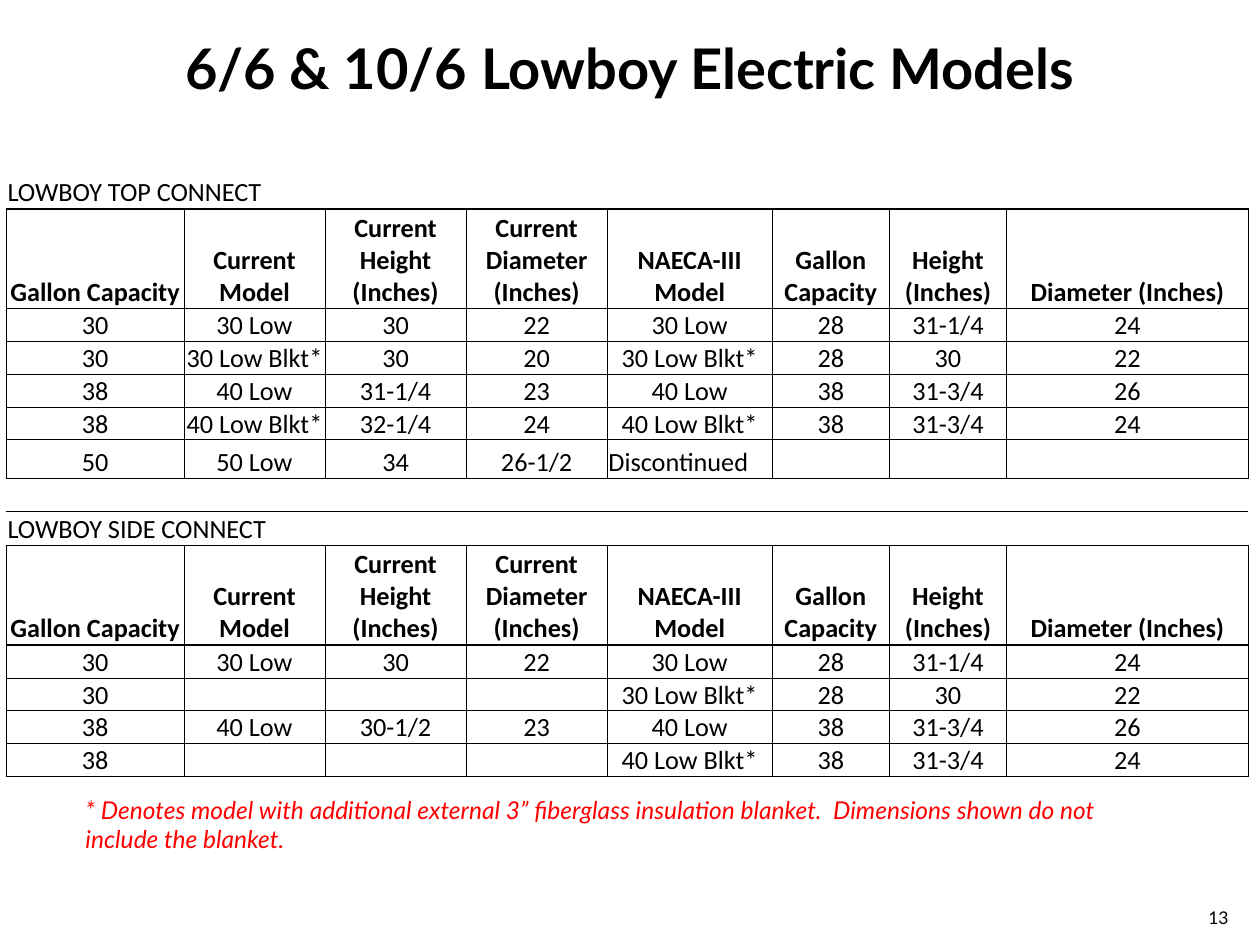
from lxml.etree import SubElement
from pptx import Presentation
from pptx.dml.color import RGBColor
from pptx.enum.text import MSO_ANCHOR as Anchor, PP_ALIGN as Align
from pptx.oxml.ns import qn
from pptx.util import Inches, Pt

BLACK, RED = "000000", "FF0000"
NO_GRID_STYLE = "{2D5ABB26-0587-4C30-8999-92F81FD0307C}"
COLUMN_WIDTHS = [1.41, 1.12, 1.12, 1.12, 1.31, 0.93, 0.93, 1.92]
HEADINGS = ["Gallon Capacity", "Current Model", "Current Height (Inches)",
            "Current Diameter (Inches)", "NAECA-III Model", "Gallon Capacity",
            "Height (Inches)", "Diameter (Inches)"]
TOP_CONNECT = [
    ["30", "30 Low", "30", "22", "30 Low", "28", "31-1/4", "24"],
    ["30", "30 Low Blkt*", "30", "20", "30 Low Blkt*", "28", "30", "22"],
    ["38", "40 Low", "31-1/4", "23", "40 Low", "38", "31-3/4", "26"],
    ["38", "40 Low Blkt*", "32-1/4", "24", "40 Low Blkt*", "38", "31-3/4", "24"],
    ["50", "50 Low", "34", "26-1/2", "Discontinued", "", "", ""],
]
SIDE_CONNECT = [
    ["30", "30 Low", "30", "22", "30 Low", "28", "31-1/4", "24"],
    ["30", "", "", "", "30 Low Blkt*", "28", "30", "22"],
    ["38", "40 Low", "30-1/2", "23", "40 Low", "38", "31-3/4", "26"],
    ["38", "", "", "", "40 Low Blkt*", "38", "31-3/4", "24"],
]


def rgb(color):
    return RGBColor.from_string(color)


def style_text(paragraph, size, font_name, color=BLACK, bold=False, italic=False,
               align=Align.LEFT):
    paragraph.alignment = align
    font = paragraph.font
    font.size, font.name = Pt(size), font_name
    font.bold, font.italic = bold, italic
    font.color.rgb = rgb(color)


def add_text(slide, text, left, top, width, height, size, anchor=Anchor.TOP, **style):
    box = slide.shapes.add_textbox(Inches(left), Inches(top), Inches(width), Inches(height))
    frame = box.text_frame
    frame.word_wrap = True
    frame.vertical_anchor = anchor
    frame.text = text
    style_text(frame.paragraphs[0], size, "Lato", **style)


def set_borders(cell, widths):
    """Draw the sides given as {"L": points}; other sides stay open."""
    properties = cell._tc.get_or_add_tcPr()
    for side in "LRTB":
        if side in widths:
            line = SubElement(properties, qn(f"a:ln{side}"), w=str(Pt(widths[side])))
            fill = SubElement(line, qn("a:solidFill"))
            SubElement(fill, qn("a:srgbClr"), val=BLACK)


def fill_cell(cell, text, borders, bold=False, align=Align.CENTER):
    set_borders(cell, borders)
    cell.fill.background()
    cell.vertical_anchor = Anchor.BOTTOM
    cell.margin_left = cell.margin_right = cell.margin_top = Inches(0.01)
    cell.margin_bottom = 0
    paragraph = cell.text_frame.paragraphs[0]
    if text:
        paragraph.text = text
    else:
        # An empty cell takes its line height from the end mark
        SubElement(paragraph._p, qn("a:endParaRPr"), sz="1500")
    style_text(paragraph, 15, "Calibri", bold=bold, align=align)


def fill_section(table, first_row, caption, models):
    """Write a caption row, a heading row and the model rows below it."""
    last_column = len(HEADINGS) - 1
    for column in range(len(HEADINGS)):
        fill_cell(table.cell(first_row, column), "" if column else caption,
                  {"B": 1}, align=Align.LEFT)
    table.cell(first_row, 0).merge(table.cell(first_row, 2))

    for offset, values in enumerate([HEADINGS] + models):
        heading = offset == 0
        for column, text in enumerate(values):
            borders = {
                "L": 1 if heading and column == 0 else 0.5,
                "R": 1 if heading and column == last_column else 0.5,
                "T": 1 if offset <= 1 else 0.5,
                "B": 1 if heading else 0.5,
            }
            align = Align.LEFT if text == "Discontinued" else Align.CENTER
            fill_cell(table.cell(first_row + 1 + offset, column), text, borders,
                      bold=heading, align=align)


def add_models_table(slide):
    row_heights = [0.27, 0.79] + [0.26] * 4 + [0.31, 0.25, 0.27, 0.79] + [0.26] * 4
    table = slide.shapes.add_table(
        len(row_heights), len(COLUMN_WIDTHS), Inches(0.05), Inches(1.39),
        Inches(sum(COLUMN_WIDTHS)), Inches(sum(row_heights))).table
    table.first_row = table.horz_banding = False
    table._tbl.tblPr.find(qn("a:tableStyleId")).text = NO_GRID_STYLE
    for column, width in zip(table.columns, COLUMN_WIDTHS):
        column.width = Inches(width)
    for row, height in zip(table.rows, row_heights):
        row.height = Inches(height)

    gap_row = len(TOP_CONNECT) + 2
    fill_section(table, 0, "LOWBOY TOP CONNECT", TOP_CONNECT)
    for cell in table.rows[gap_row].cells:
        fill_cell(cell, "", {"T": 0.5})
    fill_section(table, gap_row + 1, "LOWBOY SIDE CONNECT", SIDE_CONNECT)


def main():
    deck = Presentation()
    deck.slide_width, deck.slide_height = Inches(10), Inches(7.5)
    slide = deck.slides.add_slide(deck.slide_layouts[6])
    add_text(slide, "6/6 & 10/6 Lowboy Electric Models", 0.5, 0.22, 9, 0.62, 32,
             anchor=Anchor.MIDDLE, bold=True, align=Align.CENTER)
    add_models_table(slide)
    add_text(slide, "* Denotes model with additional external 3” fiberglass insulation "
             "blanket.  Dimensions shown do not include the blanket.",
             0.58, 6.26, 8.83, 0.57, 14, color=RED, italic=True)
    add_text(slide, "13", 9.42, 7.15, 0.5, 0.27, 10, align=Align.CENTER)
    deck.save("out.pptx")


if __name__ == "__main__":
    main()
